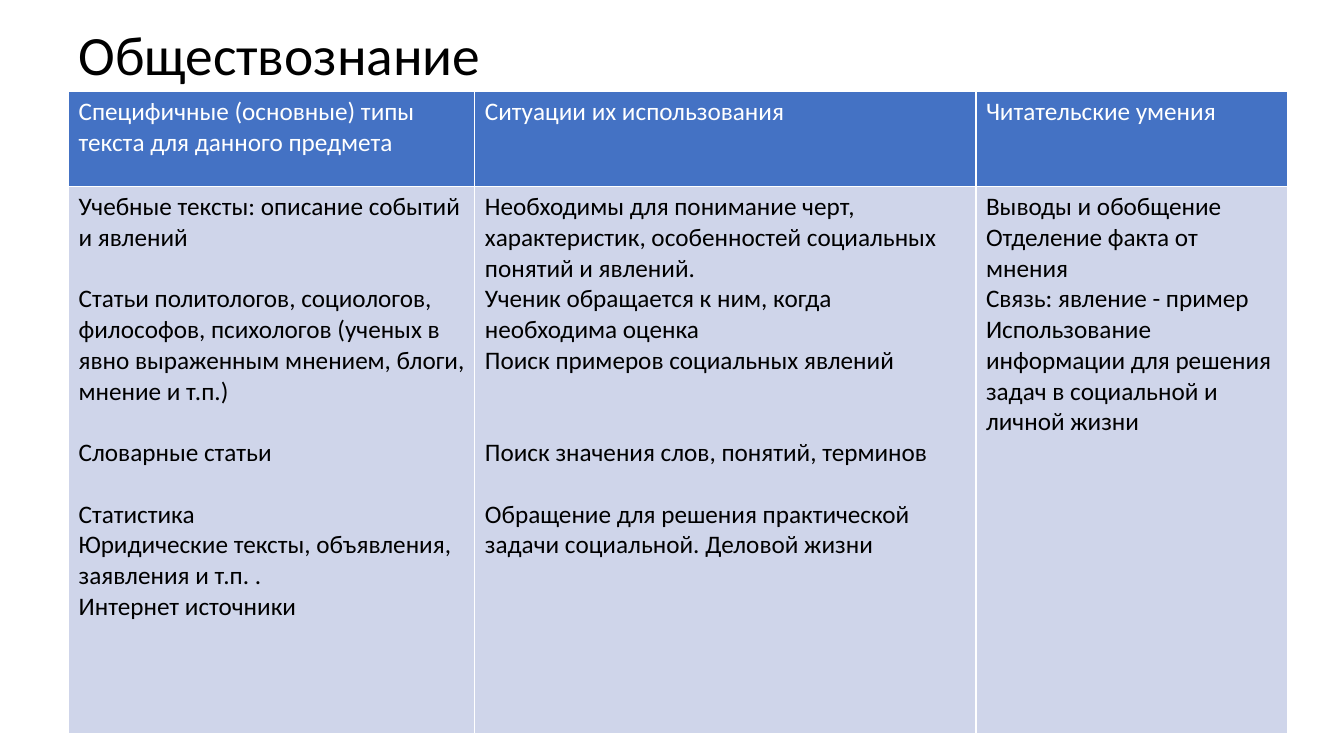
from dataclasses import dataclass

from lxml import etree
from pptx import Presentation
from pptx.dml.color import RGBColor
from pptx.enum import text
from pptx.oxml import ns
from pptx.util import Inches, Pt

WHITE = RGBColor(0xFF, 0xFF, 0xFF)
BLACK = RGBColor(0x00, 0x00, 0x00)
HEADER_BLUE = RGBColor(0x44, 0x72, 0xC4)
BODY_BLUE = RGBColor(0xCF, 0xD5, 0xEA)

LEFT = Inches(0.68)
ROW_HEIGHTS = (0.94, 5.43)
LINE_HEIGHT = Pt(22)


@dataclass(frozen=True)
class Entry:
    words: str
    lines_before: int = 0


@dataclass(frozen=True)
class Column:
    width: float
    heading: str
    entries: tuple[Entry, ...]


COLUMNS = (
    Column(4.03, "Специфичные (основные) типы текста для данного предмета", (
        Entry("Учебные тексты: описание событий и явлений"),
        Entry("Статьи политологов, социологов, философов, психологов (ученых в "
              "явно выраженным мнением, блоги, мнение и т.п.)", 1),
        Entry("Словарные статьи", 1),
        Entry("Статистика", 1),
        Entry("Юридические тексты, объявления, заявления и т.п. ."),
        Entry("Интернет источники"),
    )),
    Column(4.97, "Ситуации их использования", (
        Entry("Необходимы для понимание черт, характеристик, особенностей "
              "социальных понятий и явлений."),
        Entry("Ученик обращается к ним, когда необходима оценка"),
        Entry("Поиск примеров социальных явлений"),
        Entry("Поиск значения слов, понятий, терминов", 2),
        Entry("Обращение для решения практической задачи социальной. "
              "Деловой жизни", 1),
    )),
    Column(3.09, "Читательские умения", (
        Entry("Выводы и обобщение"),
        Entry("Отделение факта от мнения"),
        Entry("Связь: явление - пример"),
        Entry("Использование информации для решения задач в социальной и "
              "личной жизни"),
    )),
)


def write(paragraph, words: str, size: float, color: RGBColor) -> None:
    run = paragraph.add_run()
    run.text = words
    font_format = {"name": "Calibri", "size": Pt(size), "bold": False}
    for attribute, value in font_format.items():
        setattr(run.font, attribute, value)
    run.font.color.rgb = color


def add_borders(cell) -> None:
    properties = cell._tc.get_or_add_tcPr()
    for position, side in enumerate(("lnL", "lnR", "lnT", "lnB")):
        line = etree.Element(ns.qn(f"a:{side}"), w=str(Pt(1)))
        fill = etree.SubElement(line, ns.qn("a:solidFill"))
        etree.SubElement(fill, ns.qn("a:srgbClr"), val=str(WHITE))
        properties.insert(position, line)


def fill_cell(cell, entries: tuple[Entry, ...], color: RGBColor,
              background: RGBColor) -> None:
    cell.fill.solid()
    cell.fill.fore_color.rgb = background
    add_borders(cell)
    frame = cell.text_frame
    for number, entry in enumerate(entries):
        paragraph = frame.add_paragraph() if number else frame.paragraphs[0]
        paragraph.space_before = LINE_HEIGHT * entry.lines_before
        write(paragraph, entry.words, 18, color)


def add_title(slide) -> None:
    title = slide.shapes.add_textbox(LEFT, Inches(0.32), Inches(10.3), Inches(0.5))
    frame_format = {
        "word_wrap": True,
        "auto_size": text.MSO_AUTO_SIZE.NONE,
        "vertical_anchor": text.MSO_ANCHOR.MIDDLE,
    }
    for attribute, value in frame_format.items():
        setattr(title.text_frame, attribute, value)
    heading = title.text_frame.paragraphs[0]
    heading.line_spacing = 0.9
    write(heading, "Обществознание", 39.6, BLACK)


def add_reading_table(slide) -> None:
    width = sum(column.width for column in COLUMNS)
    table = slide.shapes.add_table(
        len(ROW_HEIGHTS), len(COLUMNS), LEFT, Inches(0.91),
        Inches(width), Inches(sum(ROW_HEIGHTS))).table
    for row, height in zip(table.rows, ROW_HEIGHTS):
        row.height = Inches(height)
    for index, column in enumerate(COLUMNS):
        table.columns[index].width = Inches(column.width)
        fill_cell(table.cell(0, index), (Entry(column.heading),), WHITE, HEADER_BLUE)
        fill_cell(table.cell(1, index), column.entries, BLACK, BODY_BLUE)


def main() -> None:
    presentation = Presentation()
    presentation.slide_width = Inches(13.33)
    presentation.slide_height = Inches(7.5)
    slide = presentation.slides.add_slide(presentation.slide_layouts[6])
    add_title(slide)
    add_reading_table(slide)
    presentation.save("out.pptx")


if __name__ == "__main__":
    main()
